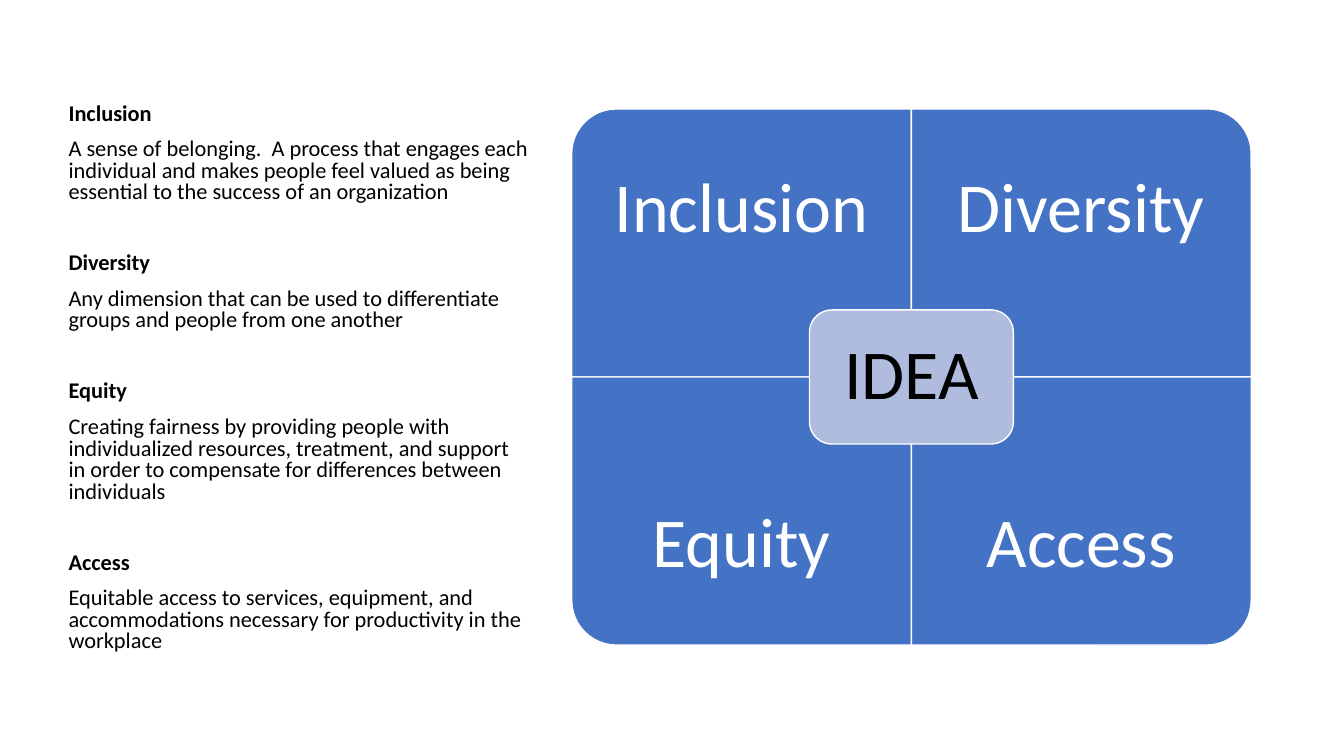
import pptx
import pptx.util
import pptx.dml.color
import pptx.enum.shapes
import pptx.enum.text
import pptx.oxml.ns
import lxml.etree

Inches = pptx.util.Inches
Pt = pptx.util.Pt
RGBColor = pptx.dml.color.RGBColor
Shape = pptx.enum.shapes.MSO_SHAPE
Text = pptx.enum.text

BLUE = RGBColor(0x44, 0x72, 0xC4)
PALE = RGBColor(0xB0, 0xBC, 0xDE)
WHITE = RGBColor(0xFF, 0xFF, 0xFF)
BLACK = RGBColor(0x00, 0x00, 0x00)

TERMS = [
    ("Inclusion", "A sense of belonging.  A process that engages each individual "
     "and makes people feel valued as being essential to the success of an organization"),
    ("Diversity", "Any dimension that can be used to differentiate groups "
     "and people from one another"),
    ("Equity", "Creating fairness by providing people with individualized resources, "
     "treatment, and support in order to compensate for differences between individuals"),
    ("Access", "Equitable access to services, equipment, and accommodations "
     "necessary for productivity in the workplace"),
]
TURNS = [270, 0, 180, 90]


def style(run, size, color, bold=False):
    run.font.name = "Calibri"
    run.font.size = Pt(size)
    run.font.color.rgb = color
    run.font.bold = bold


def label(shape, text, color, inset):
    frame = shape.text_frame
    frame.word_wrap = True
    frame.vertical_anchor = Text.MSO_ANCHOR.MIDDLE
    frame.margin_left = frame.margin_right = Inches(inset)
    frame.margin_top = frame.margin_bottom = Inches(inset)
    frame.text = text
    line = frame.paragraphs[0]
    line.alignment = Text.PP_ALIGN.CENTER
    line.line_spacing = 0.9
    style(line.runs[0], 50, color)


def block(slide, kind, x, y, wide, high, fill):
    shape = slide.shapes.add_shape(kind, Inches(x), Inches(y), Inches(wide), Inches(high))
    shape.shadow.inherit = False
    shape.fill.solid()
    shape.fill.fore_color.rgb = fill
    shape.line.color.rgb = WHITE
    shape.line.width = Pt(1)
    return shape


def tile(slide, x, y, wide, high, turn):
    across, down = (high, wide) if turn % 180 else (wide, high)
    shape = block(slide, Shape.ROUND_1_RECTANGLE, x + (wide - across) / 2,
                  y + (high - down) / 2, across, down, BLUE)
    shape.rotation = turn


def matrix(slide, x, y, wide, high):
    cell, tall = wide / 2, high / 2
    band = tall * 0.75
    for i, (name, _) in enumerate(TERMS):
        row, col = divmod(i, 2)
        left, top = x + col * cell, y + row * tall
        tile(slide, left, top, cell, tall, TURNS[i])
        box = slide.shapes.add_textbox(Inches(left), Inches(top + row * (tall - band)),
                                       Inches(cell), Inches(band))
        label(box, name, WHITE, 0.39)
    core, deep = cell * 0.6, tall / 2
    hub = block(slide, Shape.ROUNDED_RECTANGLE, x + (wide - core) / 2,
                y + (high - deep) / 2, core, deep, PALE)
    label(hub, "IDEA", BLACK, 0.21)


def terms(slide, x, y, wide, high):
    body = slide.placeholders[1]
    body.left, body.top = Inches(x), Inches(y)
    body.width, body.height = Inches(wide), Inches(high)
    frame = body.text_frame
    frame.word_wrap = True
    frame.auto_size = Text.MSO_AUTO_SIZE.NONE
    frame.vertical_anchor = Text.MSO_ANCHOR.MIDDLE
    frame.text = "\n".join(part for term in TERMS for part in term)
    for i, line in enumerate(frame.paragraphs):
        head = i % 2 == 0
        props = line._p.get_or_add_pPr()
        props.set("marL", "0")
        props.set("indent", "0")
        lxml.etree.SubElement(props, pptx.oxml.ns.qn("a:buNone"))
        line.line_spacing = 0.8
        line.space_before = Pt(0 if i == 0 else 35.5 if head else 10)
        line.space_after = Pt(0)
        style(line.runs[0], 16, BLACK, head)


def main():
    deck = pptx.Presentation()
    deck.slide_width, deck.slide_height = Inches(13.33), Inches(7.5)
    slide = deck.slides.add_slide(deck.slide_layouts[1])
    title = slide.shapes.title.element
    title.getparent().remove(title)
    matrix(slide, 5.67, 1.08, 6.74, 5.32)
    terms(slide, 0.58, 0.73, 4.78, 6.05)
    deck.save("out.pptx")


if __name__ == "__main__":
    main()
